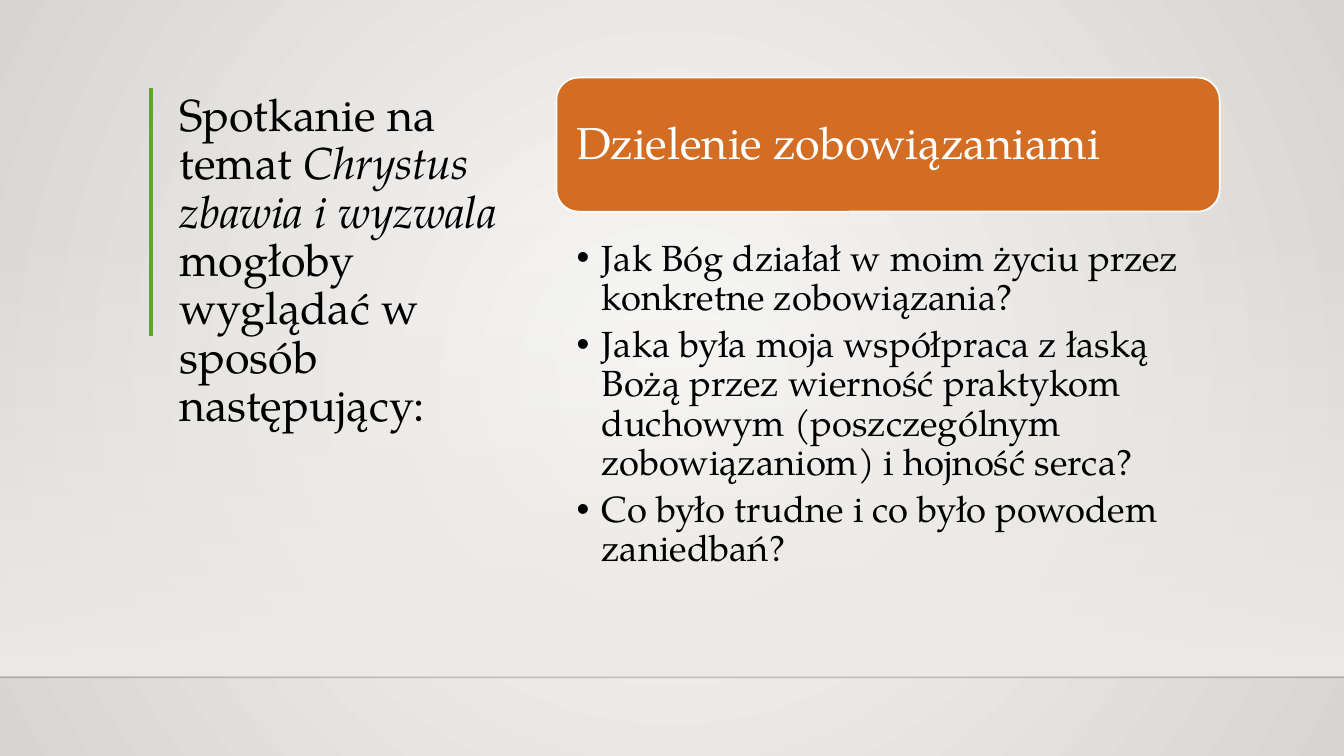
import dataclasses

import pptx
import pptx.dml.color
import pptx.enum.shapes
import pptx.enum.text
import pptx.oxml
import pptx.oxml.ns
import pptx.util

TITLE = [
    ("Spotkanie na temat ", False),
    ("Chrystus zbawia i wyzwala", True),
    (" mogłoby wyglądać w sposób następujący:", False),
]
HEADING = "Dzielenie zobowiązaniami"
QUESTIONS = [
    "Jak Bóg działał w moim życiu przez konkretne zobowiązania?",
    "Jaka była moja współpraca z łaską Bożą przez wierność praktykom duchowym "
    "(poszczególnym zobowiązaniom) i hojność serca?",
    "Co było trudne i co było powodem zaniedbań?",
]

# left, top, width, height in percent of the slide
AREAS = {
    "wall": (0, 29.33, 100, 60),
    "floor line": (0, 89.6, 100, 0),
    "title rule": (11.25, 11.6, 0, 32.8),
    "title": (12.6, 11.6, 26.1, 46.13),
    "heading": (41.4, 10.27, 49.35, 17.73),
    "questions": (41.4, 31.2, 49.35, 57.47),
}


@dataclasses.dataclass(frozen=True)
class Theme:
    font: str = "TeX Gyre Pagella"
    title_size: int = 32
    body_size: int = 26
    ink: str = "000000"
    white: str = "FFFFFF"
    accent: str = "D26D23"
    rule: str = "5FA534"
    floor: str = "000001"
    wall: str = "EDEBE7"
    glow: str = "FAFAF9"
    edge: str = "D7D5D2"


THEME = Theme()
WIDTH, HEIGHT = pptx.util.Inches(13.33), pptx.util.Inches(7.5)


def rgb(value):
    return pptx.dml.color.RGBColor.from_string(value)


def area(name):
    left, top, width, height = AREAS[name]
    return [int(share * side / 100) for share, side in
            ((left, WIDTH), (top, HEIGHT), (width, WIDTH), (height, HEIGHT))]


def element(markup):
    """Parse one DrawingML element written without its namespace."""
    tag, rest = markup[:-2].partition(" ")[::2]
    namespace = pptx.oxml.ns.nsdecls("a")
    return pptx.oxml.parse_xml(f"{tag.replace('<', '<a:')} {namespace} {rest}/>")


def set_opacity(color_element, percent):
    color_element.append(element(f'<alpha val="{percent * 1000}"/>'))


def fill_gradient(fill, first, last):
    fill.gradient()
    for stop, color, position in zip(fill.gradient_stops, (first, last), (0, 1)):
        stop.color.rgb = rgb(color)
        stop.position = position


def write(para, text, *, size, color=THEME.ink, italic=False, after=0):
    para.alignment = pptx.enum.text.PP_ALIGN.LEFT
    para.line_spacing = 0.9
    para.space_before = pptx.util.Pt(0)
    para.space_after = pptx.util.Pt(after)
    span = para.add_run()
    span.text = text
    span.font.name = THEME.font
    span.font.size = pptx.util.Pt(size)
    span.font.color.rgb = rgb(color)
    span.font.italic = italic


def set_frame(box, anchor, horizontal=0.1, vertical=0.05):
    frame = box.text_frame
    frame.word_wrap = True
    frame.auto_size = pptx.enum.text.MSO_AUTO_SIZE.NONE
    frame.vertical_anchor = anchor
    frame.margin_left = frame.margin_right = pptx.util.Inches(horizontal)
    frame.margin_top = frame.margin_bottom = pptx.util.Inches(vertical)
    return frame


def place(box, name):
    box.left, box.top, box.width, box.height = area(name)


def add_line(page, name, color, width):
    left, top, across, down = area(name)
    line = page.shapes.add_connector(
        pptx.enum.shapes.MSO_CONNECTOR.STRAIGHT, left, top, left + across, top + down)
    line.line.color.rgb = rgb(color)
    line.line.width = pptx.util.Pt(width)
    line.element.spPr.append(element("<effectLst />"))
    return line


def add_box(page, kind, name):
    box = page.shapes.add_shape(kind, *area(name))
    box.shadow.inherit = False
    return box


def draw_backdrop(page):
    fill_gradient(page.background.fill, THEME.glow, THEME.edge)
    linear = next(page.element.iter(pptx.oxml.ns.qn("a:lin")))
    radial = element('<path path="circle"/>')
    radial.append(element('<fillToRect l="50000" t="50000" r="50000" b="50000"/>'))
    linear.getparent().replace(linear, radial)

    wall = add_box(page, pptx.enum.shapes.MSO_SHAPE.RECTANGLE, "wall")
    wall.line.fill.background()
    fill_gradient(wall.fill, THEME.wall, THEME.wall)
    wall.fill.gradient_angle = 270
    color_tag = pptx.oxml.ns.qn("a:srgbClr")
    set_opacity(next(wall.element.spPr.iter(color_tag)), 0)

    floor = add_line(page, "floor line", THEME.floor, 1)
    set_opacity(next(floor.element.spPr.iter(color_tag)), 20)
    add_line(page, "title rule", THEME.rule, 3)


def fill_title(box):
    place(box, "title")
    frame = set_frame(box, pptx.enum.text.MSO_ANCHOR.BOTTOM)
    for text, italic in TITLE:
        write(frame.paragraphs[0], text, size=THEME.title_size, italic=italic)


def draw_heading(page):
    box = add_box(page, pptx.enum.shapes.MSO_SHAPE.ROUNDED_RECTANGLE, "heading")
    box.fill.solid()
    box.fill.fore_color.rgb = rgb(THEME.accent)
    box.line.color.rgb = rgb(THEME.white)
    box.line.width = pptx.util.Pt(1.25)
    frame = set_frame(box, pptx.enum.text.MSO_ANCHOR.MIDDLE, 0.13, 0.13)
    write(frame.paragraphs[0], HEADING, size=THEME.title_size, color=THEME.white)


def fill_questions(box):
    place(box, "questions")
    frame = set_frame(box, pptx.enum.text.MSO_ANCHOR.TOP, 0.2, 0.04)
    indent = pptx.util.Inches(0.25)
    for index, question in enumerate(QUESTIONS):
        para = frame.add_paragraph() if index else frame.paragraphs[0]
        properties = para._p.get_or_add_pPr()
        properties.set("marL", str(indent))
        properties.set("indent", str(-indent))
        properties.append(element('<buChar char="•"/>'))
        write(para, question, size=THEME.body_size, after=5.5)


def main():
    deck = pptx.Presentation()
    deck.slide_width, deck.slide_height = WIDTH, HEIGHT
    page = deck.slides.add_slide(deck.slide_layouts[1])
    title, questions = page.placeholders
    draw_backdrop(page)
    fill_title(title)
    draw_heading(page)
    fill_questions(questions)
    for box in (title, questions):  # bring the text in front of the backdrop
        page.shapes.element.append(box.element)
    deck.save("out.pptx")


if __name__ == "__main__":
    main()
